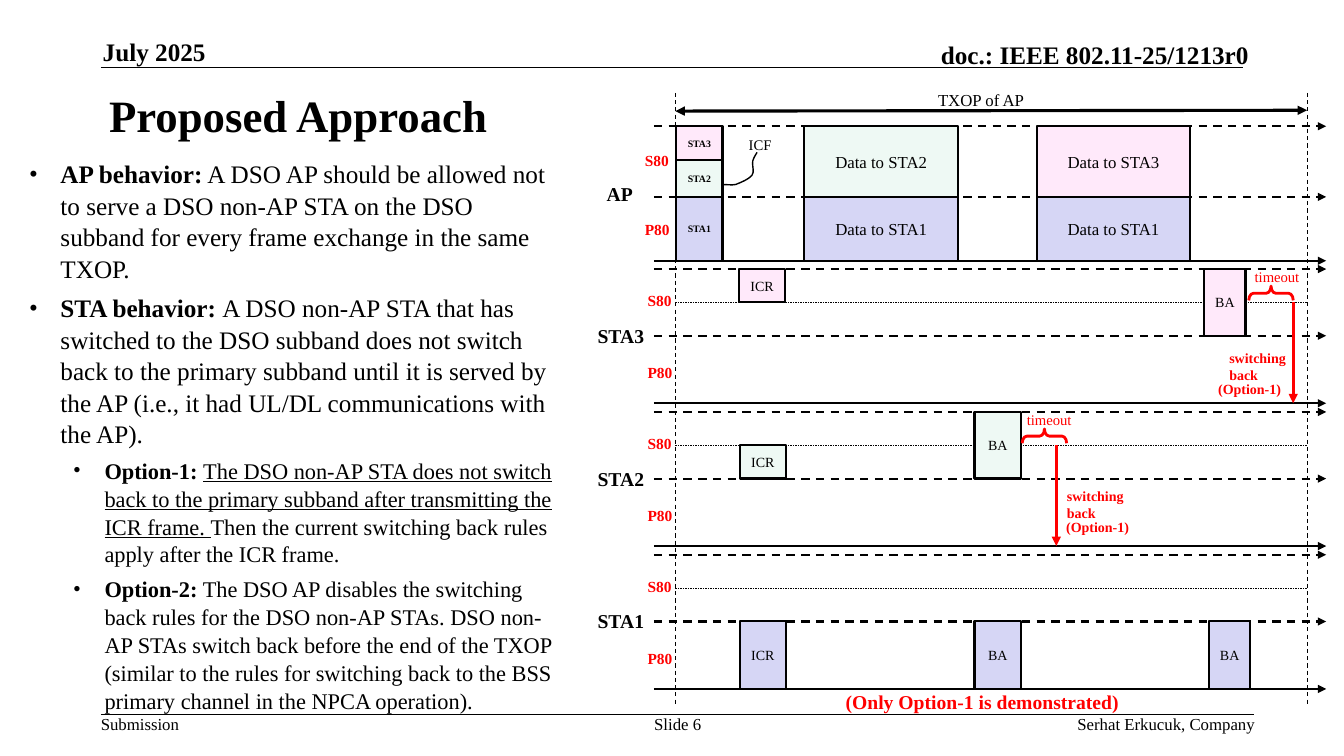
import pptx
import pptx.dml.color
import pptx.enum.dml
import pptx.enum.shapes
import pptx.enum.text
import pptx.oxml.ns
import pptx.util
from lxml import etree

Cm, Pt, qn = pptx.util.Cm, pptx.util.Pt, pptx.oxml.ns.qn
ALIGN, ANCHOR = pptx.enum.text.PP_ALIGN, pptx.enum.text.MSO_ANCHOR
SHAPE = pptx.enum.shapes.MSO_SHAPE
FONT = "Times New Roman"
BLACK, RED = "000000", "FF0000"
LILAC, MINT, PINK = "D6D6F5", "EEF9F4", "FFE9FA"

TITLE = "Proposed Approach"
# level, then runs as (text, style)
POINTS = [
    (0, [("AP behavior:", "b"),
         (" A DSO AP should be allowed not to serve a DSO non-AP STA on the DSO subband "
          "for every frame exchange in the same TXOP.", "")]),
    (0, [("STA behavior: ", "b"),
         ("A DSO non-AP STA that has switched to the DSO subband does not switch back to the "
          "primary subband until it is served by the AP (i.e., it had UL/DL communications "
          "with the AP).", "")]),
    (1, [("Option-1: ", "b"),
         ("The DSO non-AP STA does not switch back to the primary subband after transmitting "
          "the ICR frame. ", "u"),
         ("Then the current switching back rules apply after the ICR frame.", "")]),
    (1, [("Option-2:", "b"),
         (" The DSO AP disables the switching back rules for the DSO non-AP STAs. DSO non-AP "
          "STAs switch back before the end of the TXOP (similar to the rules for switching "
          "back to the BSS primary channel in the NPCA operation).", "")]),
]
LEVELS = [dict(size=18, margin=0.79, before=6), dict(size=16, margin=1.9, before=5)]

# Heights of the lines of each station's timeline, in cm
LANES = {"AP": dict(top=3.18, split=4.04, mid=4.96, base=6.57)}
for row, station in enumerate(["STA3", "STA2", "STA1"]):
    top = 6.78 + 3.6 * row
    LANES[station] = dict(top=top, dots=top + 0.84, mid=top + 1.68, base=top + 3.38)

# station, text, left, width, upper lane, lower lane, fill, size
FRAMES = [
    ("AP", "STA3", 17.04, 1.17, "top", "split", PINK, 7),
    ("AP", "STA2", 17.04, 1.17, "split", "mid", MINT, 7),
    ("AP", "STA1", 17.04, 1.17, "mid", "base", LILAC, 7),
    ("AP", "Data to STA2", 20.27, 3.88, "top", "mid", MINT, 12),
    ("AP", "Data to STA1", 20.27, 3.88, "mid", "base", LILAC, 12),
    ("AP", "Data to STA3", 26.14, 3.85, "top", "mid", PINK, 12),
    ("AP", "Data to STA1", 26.14, 3.85, "mid", "base", LILAC, 12),
    ("STA3", "ICR", 18.62, 1.17, "top", "dots", PINK, 10),
    ("STA3", "BA", 30.35, 1.04, "top", "mid", PINK, 10),
    ("STA2", "ICR", 18.64, 1.17, "dots", "mid", MINT, 10),
    ("STA2", "BA", 24.56, 1.17, "top", "mid", MINT, 10),
    ("STA1", "ICR", 18.64, 1.17, "mid", "base", LILAC, 10),
    ("STA1", "BA", 24.56, 1.17, "mid", "base", LILAC, 10),
    ("STA1", "BA", 30.48, 1.02, "mid", "base", LILAC, 10),
]
# station label left, S80 and P80 left, drops from the top lane: station, S80, P80
ROW_LABELS = {"AP": (15.04, 16.0, 1.27, 0.5, 2.23)}
ROW_LABELS.update({s: (14.81, 16.07, 1.25, 0.43, 2.24) for s in ("STA3", "STA2", "STA1")})
# station, brace left, timeout left, arrow x, note left, option left, note drop
TIMEOUTS = [
    ("STA3", 31.85, 31.37, 32.59, 30.73, 30.45, 1.91),
    ("STA2", 26.14, 25.63, 26.62, 26.64, 26.62, 1.79),
]
TXOP_START, TXOP_END = 17.02, 32.94
LANE_START, LANE_END = 16.48, 33.42
ICF_CURVE = [(18.21, 4.65), (18.31, 4.65), (18.44, 4.67), (18.54, 4.65), (18.67, 4.6),
             (18.87, 4.52), (18.95, 4.42), (19.02, 4.34), (18.95, 4.17), (18.97, 4.06),
             (19.0, 3.96), (19.05, 3.89), (19.08, 3.84)]

deck = pptx.Presentation()
deck.slide_width, deck.slide_height = Cm(33.87), Cm(19.05)
slide = deck.slides.add_slide(deck.slide_layouts[1])


def rgb(value):
    return pptx.dml.color.RGBColor.from_string(value)


def add_run(paragraph, text, size=12, bold=False, underline=False, color=BLACK):
    run = paragraph.add_run()
    run.text = text
    run.font.name, run.font.size = FONT, Pt(size)
    run.font.bold, run.font.underline = bold, underline
    run.font.color.rgb = rgb(color)


def write(frame, text, align=ALIGN.LEFT, anchor=ANCHOR.TOP, wrap=True, inset=None, **style):
    frame.word_wrap, frame.vertical_anchor = wrap, anchor
    if inset is not None:
        frame.margin_left = frame.margin_right = Cm(inset)
        frame.margin_top = frame.margin_bottom = Cm(inset)
    frame.paragraphs[0].alignment = align
    add_run(frame.paragraphs[0], text, **style)


def label(text, left, top, width, height, **style):
    box = slide.shapes.add_textbox(Cm(left), Cm(top), Cm(width), Cm(height))
    write(box.text_frame, text, **style)


def draw_line(x1, y1, x2, y2, width=1.0, color=BLACK, dashed=False, ends=()):
    """Draw a straight line; ends lists the arrowheads, headEnd before tailEnd."""
    link = slide.shapes.add_connector(
        pptx.enum.shapes.MSO_CONNECTOR.STRAIGHT, Cm(x1), Cm(y1), Cm(x2), Cm(y2))
    link.line.width, link.line.color.rgb = Pt(width), rgb(color)
    if dashed:
        link.line.dash_style = pptx.enum.dml.MSO_LINE.DASH
    for end in ends:
        etree.SubElement(link.line._get_or_add_ln(), qn("a:" + end), type="triangle")
    etree.SubElement(link._element.spPr, qn("a:effectLst"))


def outline(shape, width, color=BLACK, fill=None):
    shape.shadow.inherit = False
    shape.line.width, shape.line.color.rgb = Pt(width), rgb(color)
    if fill:
        shape.fill.solid()
        shape.fill.fore_color.rgb = rgb(fill)
    else:
        shape.fill.background()


def place(shape, left, top, width, height):
    shape.left, shape.top, shape.width, shape.height = map(Cm, (left, top, width, height))


# Header and footer
draw_line(2.54, 1.7, 31.32, 1.7)
draw_line(2.54, 18.0, 31.6, 18.0)
label("July 2025", 2.59, 0.91, 6.93, 0.76, size=18, bold=True, anchor=ANCHOR.BOTTOM, inset=0)
label("doc.: IEEE 802.11-25/1213r0", 18.52, 0.99, 12.95, 0.76, size=18, bold=True,
      align=ALIGN.RIGHT, anchor=ANCHOR.BOTTOM, inset=0)
label("Submission", 2.54, 17.98, 2.01, 0.51, wrap=False, inset=0)
label("Slide 6", 16.1, 17.98, 1.96, 1.0, align=ALIGN.CENTER, inset=0)
label("Serhat Erkucuk, Company", 19.84, 17.98, 11.79, 0.51, align=ALIGN.RIGHT, inset=0)

# Title and list
title, body = slide.shapes.title, slide.placeholders[1]
place(title, 1.75, 2.16, 11.53, 1.45)
title.text_frame.auto_size = pptx.enum.text.MSO_AUTO_SIZE.NONE
write(title.text_frame, TITLE, size=32, bold=True, align=ALIGN.CENTER, anchor=ANCHOR.MIDDLE)

place(body, 0.48, 3.84, 13.97, 13.77)
body.text_frame.word_wrap = True
body.text_frame.auto_size = pptx.enum.text.MSO_AUTO_SIZE.NONE
for number, (level, runs) in enumerate(POINTS):
    point = body.text_frame.add_paragraph() if number else body.text_frame.paragraphs[0]
    look = LEVELS[level]
    point.level = level
    properties = point._p.get_or_add_pPr()
    properties.set("marL", str(Cm(look["margin"])))
    properties.set("indent", str(-Cm(0.79)))
    etree.SubElement(properties, qn("a:buFont"), typeface=FONT)
    etree.SubElement(properties, qn("a:buChar"), char="•")
    point.space_before = Pt(look["before"] if number else 0)
    point.line_spacing = 1.04
    for text, style in runs:
        add_run(point, text, size=look["size"], bold=style == "b", underline=style == "u")

# Timelines
for x in (TXOP_START, TXOP_END):
    draw_line(x, 2.34, x, 17.78, width=0.75, dashed=True)
draw_line(TXOP_START, 2.8, TXOP_END, 2.78, width=2.25, ends=("headEnd", "tailEnd"))
label("TXOP of AP", 23.39, 2.13, 4.01, 0.76)
for station, lanes in LANES.items():
    for lane in ("top", "mid", "base"):
        draw_line(LANE_START, lanes[lane], LANE_END, lanes[lane], width=1.5,
                  dashed=lane != "base", ends=("tailEnd",))
    if "dots" in lanes:
        draw_line(TXOP_START, lanes["dots"], TXOP_END, lanes["dots"], width=0.25, dashed=True)
    station_left, band_left, *drops = ROW_LABELS[station]
    station_top, s80_top, p80_top = [lanes["top"] + drop for drop in drops]
    label(station, station_left, station_top, 1.7, 0.86, size=14, bold=True, wrap=False)
    for band, band_top in (("S80", s80_top), ("P80", p80_top)):
        label(band, band_left, band_top, 1.17, 0.74, size=11, bold=True, color=RED)

for station, text, left, width, upper, lower, fill, size in FRAMES:
    lanes = LANES[station]
    frame = slide.shapes.add_shape(SHAPE.RECTANGLE, Cm(left), Cm(lanes[upper]), Cm(width),
                                   Cm(lanes[lower] - lanes[upper]))
    outline(frame, 1.5, fill=fill)
    write(frame.text_frame, text, size=size, bold=size == 7, align=ALIGN.CENTER,
          anchor=ANCHOR.MIDDLE, inset=0)

# ICF callout: each three points after the first make one Bézier segment
start, *rest = [(Cm(x), Cm(y)) for x, y in ICF_CURVE]
builder = slide.shapes.build_freeform(*start)
builder.add_line_segments(rest, close=False)
callout = builder.convert_to_shape()
outline(callout, 1)
segments = list(callout._element.iter(qn("a:lnTo")))
for first in range(0, len(segments), 3):
    curve = etree.SubElement(segments[first].getparent(), qn("a:cubicBezTo"))
    for segment in segments[first:first + 3]:
        curve.append(segment[0])
        segment.getparent().remove(segment)
label("ICF", 18.62, 3.3, 1.3, 0.74, size=10.5)

# Timeouts and switching back
for station, brace_left, timeout_left, arrow_x, note_left, option_left, drop in TIMEOUTS:
    lanes = LANES[station]
    top = lanes["top"]
    draw_line(arrow_x, lanes["dots"], arrow_x, lanes["base"], width=2.25, color=RED,
              ends=("tailEnd",))
    brace = slide.shapes.add_shape(SHAPE.LEFT_BRACE, Cm(brace_left), Cm(top + 0.05),
                                   Cm(0.36), Cm(1.12))
    brace.rotation = 90
    brace.adjustments[0] = 0.33
    outline(brace, 2, color=RED)
    label("timeout", timeout_left, top - 0.15, 1.93, 0.74, size=10.5, color=RED)
    label("switching back", note_left, top + drop, 1.96, 1.12, size=10, bold=True, color=RED)
    label("(Option-1)", option_left, top + drop + 0.77, 2.18, 0.69, size=10, bold=True,
          color=RED)
label("(Only Option-1 is demonstrated)", 21.06, 17.25, 9.07, 0.86, size=14, bold=True, color=RED)

deck.save("out.pptx")
